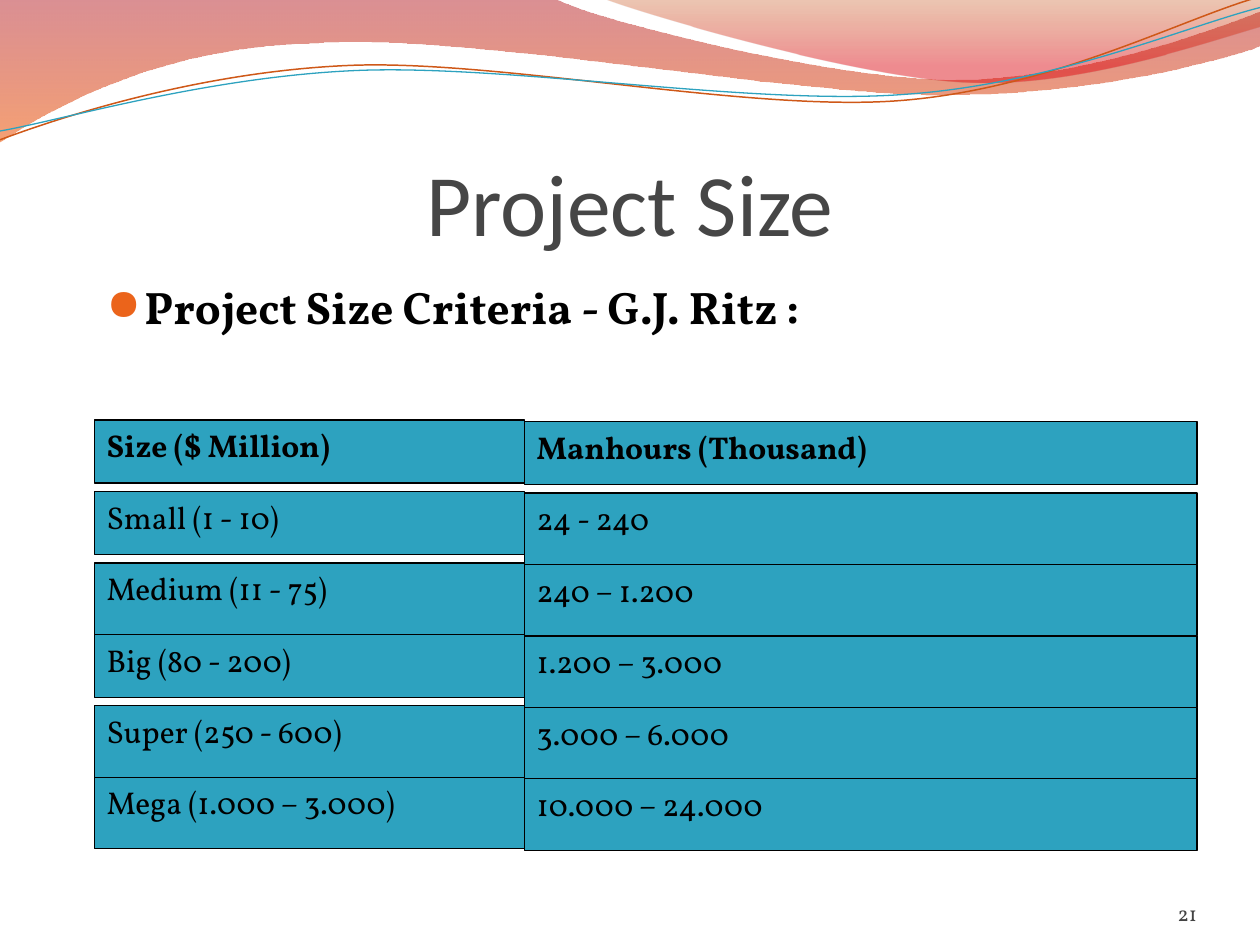
from collections import namedtuple
from dataclasses import dataclass

from lxml.etree import SubElement
from pptx import Presentation
from pptx.dml.color import RGBColor
from pptx.enum.shapes import MSO_SHAPE
from pptx.enum.text import MSO_ANCHOR, PP_ALIGN
from pptx.oxml.ns import qn
from pptx.util import Cm, Pt

Box = namedtuple("Box", "left top width height")


@dataclass(frozen=True)
class Theme:
    """Colours, fonts and type sizes of the slide."""
    heading_font: str = "Calibri"
    text_font: str = "Vollkorn"
    bullet_font: str = "OpenSymbol"
    heading: str = "464646"
    text: str = "000000"
    number: str = "434343"
    bullet: str = "EB641B"
    cell: str = "2DA2BF"
    orange_line: str = "CF5818"
    heading_size: int = 50
    bullet_size: int = 26
    cell_size: int = 18
    number_size: int = 12
    big_wave: tuple = ((0, "AF0911", 45), (1, "EE5300", 55))
    small_wave: tuple = ((0, "C24400", 30), (0.8, "DC000B", 45))


THEME = Theme()

BIG_WAVE = [
    (0, 0), (4.4, -0.01),
    (4.76, 0.17, 6.64, 0.63, 7.58, 0.63), (8.53, 0.63, 9.58, 0.26, 10, 0.09),
    (10.01, 0.36),
    (9.83, 0.44, 8.7, 0.76, 7.46, 0.75), (6.22, 0.75, 3.82, 0.28, 2.57, 0.34),
    (1.29, 0.36, 0.46, 0.83, -0.01, 1.13),
]
SMALL_WAVE = [
    (4.79, -0.01),
    (5.09, 0.11, 6.82, 0.62, 7.69, 0.65), (8.56, 0.69, 9.61, 0.32, 10, 0.21),
    (10, 0),
]
ORANGE_CURVE = [
    (0, 1.11),
    (0.48, 0.93, 1.58, 0.57, 2.77, 0.52), (3.95, 0.47, 5.93, 0.89, 7.13, 0.8),
    (8.33, 0.71, 9.38, 0.15, 9.98, -0.02),
]
BLUE_CURVE = [
    (0, 1.04),
    (0.47, 0.96, 1.64, 0.61, 2.83, 0.56), (4.03, 0.51, 5.97, 0.84, 7.17, 0.75),
    (8.36, 0.67, 9.41, 0.21, 10, 0.06),
]

SIZES = [
    ("Size ($ Million)", "Manhours (Thousand)"),
    ("Small (1 - 10)", "24 - 240"),
    ("Medium (11 - 75)", "240 – 1.200"),
    ("Big (80 - 200)", "1.200 – 3.000"),
    ("Super (250 - 600)", "3.000 – 6.000"),
    ("Mega (1.000 – 3.000)", "10.000 – 24.000"),
]
SHORT_CELLS = {(0, 0), (0, 1), (1, 0), (3, 0)}


def rgb(code):
    """Turn a hex code into a colour."""
    return RGBColor.from_string(code)


def write(frame, text, font, size, color, bold=False, align=PP_ALIGN.LEFT):
    """Write one formatted paragraph and return it."""
    frame.word_wrap = True
    paragraph = frame.paragraphs[0]
    paragraph.text = text
    paragraph.alignment = align
    paragraph.font.name = font
    paragraph.font.size = Pt(size)
    paragraph.font.bold = bold
    paragraph.font.color.rgb = rgb(color)
    return paragraph


def add_outline(slide, box, outline_parts, closed):
    """Draw corners and cubic curves given in tenths of the box width."""
    unit = box.width / 10
    parts = [
        [(int(box.left + x * unit), int(box.top + y * unit))
         for x, y in zip(part[::2], part[1::2])]
        for part in outline_parts
    ]
    builder = slide.shapes.build_freeform(*parts[0][0])
    builder.add_line_segments([part[-1] for part in parts[1:]], close=closed)
    outline = builder.convert_to_shape()
    outline.shadow.inherit = False
    segments = list(outline.element.spPr.iter(qn("a:lnTo")))
    for segment, part in zip(segments, parts[1:]):
        if len(part) == 3:
            curve = SubElement(segment.getparent(), qn("a:cubicBezTo"))
            for x, y in part:
                SubElement(curve, qn("a:pt"), x=str(x - outline.left),
                           y=str(y - outline.top))
            segment.getparent().replace(segment, curve)
    return outline


def add_wave(slide, box, outline_parts, stops):
    """Draw a wave with a see-through gradient from top to bottom."""
    wave = add_outline(slide, box, outline_parts, closed=True)
    wave.line.fill.background()
    wave.fill.gradient()
    wave.fill.gradient_angle = 270
    for stop, (position, color, opacity) in zip(wave.fill.gradient_stops, stops):
        stop.position = position
        stop.color.rgb = rgb(color)
    colors = wave.element.spPr.iter(qn("a:srgbClr"))
    for node, (position, color, opacity) in zip(colors, stops):
        SubElement(node, qn("a:alpha"), val=str(opacity * 1000))


def add_curve(slide, box, outline_parts, color, weight):
    """Draw an open curve."""
    curve = add_outline(slide, box, outline_parts, closed=False)
    curve.fill.background()
    curve.line.color.rgb = rgb(color)
    curve.line.width = Pt(weight)


def add_banner(slide, box):
    """Draw the waves and curves along the top."""
    add_wave(slide, box, BIG_WAVE, THEME.big_wave)
    add_wave(slide, box, SMALL_WAVE, THEME.small_wave)
    add_curve(slide, box, ORANGE_CURVE, THEME.orange_line, 0.85)
    add_curve(slide, box, BLUE_CURVE, THEME.cell, 0.75)


def add_heading(slide, box):
    """Place and format the title."""
    heading = slide.shapes.title
    heading.left, heading.top, heading.width, heading.height = box
    frame = heading.text_frame
    frame.vertical_anchor = MSO_ANCHOR.BOTTOM
    frame.margin_left = frame.margin_right = frame.margin_bottom = 0
    write(frame, "Project Size", THEME.heading_font, THEME.heading_size,
          THEME.heading, align=PP_ALIGN.CENTER)


def add_criteria(slide, box):
    """Add the bulleted line above the grid."""
    frame = slide.shapes.add_textbox(*box).text_frame
    criteria = write(frame, "Project Size Criteria - G.J. Ritz :", THEME.text_font,
                     THEME.bullet_size, THEME.text, bold=True)
    criteria.space_before = Pt(2)
    properties = criteria._p.get_or_add_pPr()
    properties.set("marL", str(Cm(0.76)))
    properties.set("indent", str(-Cm(0.76)))
    bullet_color = SubElement(properties, qn("a:buClr"))
    SubElement(bullet_color, qn("a:srgbClr"), val=THEME.bullet)
    SubElement(properties, qn("a:buSzPct"), val="95000")
    SubElement(properties, qn("a:buFont"), typeface=THEME.bullet_font)
    SubElement(properties, qn("a:buChar"), char="●")
    properties.append(properties.find(qn("a:defRPr")))


def add_size_grid(slide, box):
    """Add the grid of sizes and manhours, the right column slightly lower."""
    pitch = box.height / len(SIZES)
    split = Cm(8.67)
    columns = [(0, split, 0), (split, box.width - split, Cm(0.03))]
    for row, entries in enumerate(SIZES):
        for column, (entry, (left, width, drop)) in enumerate(zip(entries, columns)):
            height = Cm(1.27) if (row, column) in SHORT_CELLS else pitch
            cell = slide.shapes.add_shape(
                MSO_SHAPE.RECTANGLE, box.left + left,
                int(box.top + drop + row * pitch), width, int(height))
            cell.shadow.inherit = False
            cell.fill.solid()
            cell.fill.fore_color.rgb = rgb(THEME.cell)
            cell.line.color.rgb = rgb(THEME.text)
            cell.line.width = Pt(0.75)
            cell.text_frame.vertical_anchor = MSO_ANCHOR.TOP
            write(cell.text_frame, entry, THEME.text_font, THEME.cell_size,
                  THEME.text, bold=row == 0)


def add_page_number(slide, box):
    """Add the page number."""
    frame = slide.shapes.add_textbox(*box).text_frame
    frame.margin_left = frame.margin_right = frame.margin_top = frame.margin_bottom = 0
    frame.vertical_anchor = MSO_ANCHOR.BOTTOM
    write(frame, "21", THEME.text_font, THEME.number_size, THEME.number,
          align=PP_ALIGN.RIGHT)


def main():
    """Build the slide and save it."""
    deck = Presentation()
    deck.slide_width, deck.slide_height = Cm(25.4), Cm(19.05)
    slide = deck.slides.add_slide(deck.slide_layouts[5])
    add_banner(slide, Box(0, 0, deck.slide_width, Cm(2.87)))
    add_heading(slide, Box(Cm(1.27), Cm(1.94), Cm(22.86), Cm(3.18)))
    add_criteria(slide, Box(Cm(1.9), Cm(5.51), Cm(21.59), Cm(2.97)))
    add_size_grid(slide, Box(Cm(1.9), Cm(8.47), Cm(22.23), Cm(8.64)))
    add_page_number(slide, Box(Cm(22.02), Cm(17.65), Cm(2.11), Cm(1.02)))
    deck.save("out.pptx")


if __name__ == "__main__":
    main()
